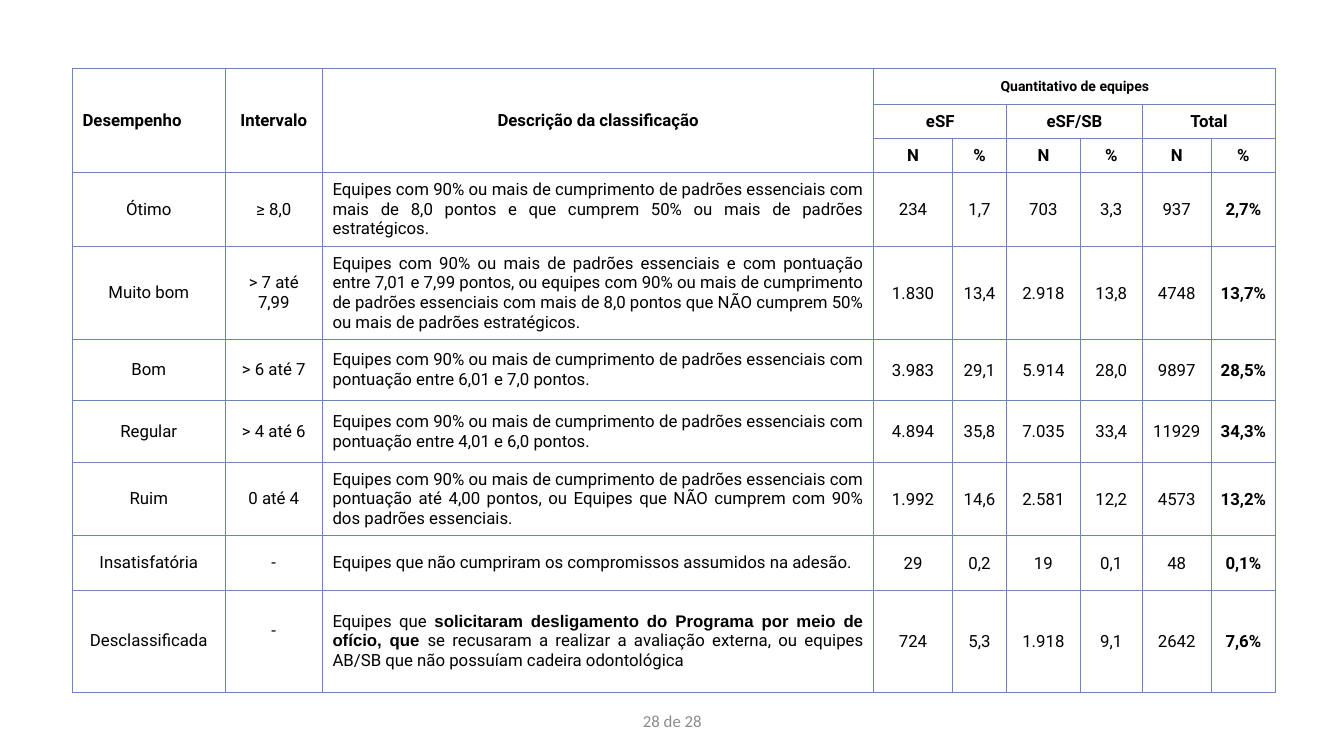
from lxml import etree
from pptx import Presentation
from pptx.dml.color import RGBColor
from pptx.enum.text import MSO_ANCHOR, PP_ALIGN
from pptx.oxml.ns import qn
from pptx.util import Cm, Pt

LEFT, CENTER, JUSTIFY = PP_ALIGN.LEFT, PP_ALIGN.CENTER, PP_ALIGN.JUSTIFY
MIDDLE = MSO_ANCHOR.MIDDLE

BORDER = "6E86B6"
COLUMN_WIDTHS = [3.84, 2.46, 13.89, 1.98, 1.37, 1.85, 1.57, 1.73, 1.63]
ROW_HEIGHTS = [0.91, 0.81, 0.81, 1.85, 2.31, 1.55, 1.55, 1.85, 1.37, 2.57]
LABEL_MARGINS = (0.25, 0.18, 0.25, 0.18)
COUNT_MARGINS = (0.03, 0.03, 0.03, 0)
RAISED_MARGINS = (0.25, 0.18, 0.25, 0.69)

HEADINGS = [
    (0, 0, 3, 1, "Desempenho"),
    (0, 1, 3, 1, "Intervalo"),
    (0, 2, 3, 1, "Descrição da classificação"),
    (0, 3, 1, 6, "Quantitativo de equipes"),
    (1, 3, 1, 2, "eSF"),
    (1, 5, 1, 2, "eSF/SB"),
    (1, 7, 1, 2, "Total"),
] + [(2, column, 1, 1, "N" if column % 2 else "%") for column in range(3, 9)]

RATINGS = [
    ("Ótimo", "≥ 8,0",
     ["Equipes com 90% ou mais de cumprimento de padrões essenciais com mais de 8,0 pontos "
      "e que cumprem 50% ou mais de padrões estratégicos."],
     "234", "1,7", "703", "3,3", "937", "2,7%"),
    ("Muito bom", "> 7 até 7,99",
     ["Equipes com 90% ou mais de padrões essenciais e com pontuação entre 7,01 e 7,99 pontos, "
      "ou equipes com 90% ou mais de cumprimento de padrões essenciais com mais de 8,0 pontos "
      "que NÃO cumprem 50% ou mais de padrões estratégicos."],
     "1.830", "13,4", "2.918", "13,8", "4748", "13,7%"),
    ("Bom", "> 6 até 7",
     ["Equipes com 90% ou mais de cumprimento de padrões essenciais com pontuação entre "
      "6,01 e 7,0 pontos."],
     "3.983", "29,1", "5.914", "28,0", "9897", "28,5%"),
    ("Regular", "> 4 até 6",
     ["Equipes com 90% ou mais de cumprimento de padrões essenciais com pontuação entre "
      "4,01 e 6,0 pontos."],
     "4.894", "35,8", "7.035", "33,4", "11929", "34,3%"),
    ("Ruim", "0 até 4",
     ["Equipes com 90% ou mais de cumprimento de padrões essenciais com pontuação até 4,00 pontos, "
      "ou Equipes que NÃO cumprem com 90% dos padrões essenciais."],
     "1.992", "14,6", "2.581", "12,2", "4573", "13,2%"),
    ("Insatisfatória", "-",
     ["Equipes que não cumpriram os compromissos assumidos na adesão."],
     "29", "0,2", "19", "0,1", "48", "0,1%"),
    ("Desclassificada", "-",
     ["Equipes que ",
      "solicitaram desligamento do Programa por meio de ofício, que ",
      "se recusaram a realizar a avaliação externa, ou equipes AB/SB que não possuíam "
      "cadeira odontológica"],
     "724", "5,3", "1.918", "9,1", "2642", "7,6%"),
]


def rgb(value):
    return RGBColor.from_string(value)


def write(frame, text, size=12, font="Roboto", color="000000", bold=False, align=CENTER):
    paragraph = frame.paragraphs[0]
    paragraph.alignment = align
    run = paragraph.add_run()
    run.text = text
    run.font.size = Pt(size)
    run.font.name = font
    run.font.bold = bold
    run.font.color.rgb = rgb(color)


def outline(cell):
    properties = cell._tc.get_or_add_tcPr()
    for side in ("a:lnL", "a:lnR", "a:lnT", "a:lnB"):
        line = etree.SubElement(properties, qn(side), w=str(Pt(0.75)))
        fill = etree.SubElement(line, qn("a:solidFill"))
        etree.SubElement(fill, qn("a:srgbClr"), val=BORDER)


def set_margins(cell, margins):
    cell.margin_left, cell.margin_top, cell.margin_right, cell.margin_bottom = map(Cm, margins)


def fill_headings(table):
    for row, column, height, width, heading in HEADINGS:
        cell = table.cell(row, column)
        if height * width > 1:
            cell.merge(table.cell(row + height - 1, column + width - 1))
        write(cell.text_frame, heading, bold=True,
              size=10 if width == 6 else 12,
              align=LEFT if column == 0 else CENTER)


def fill_ratings(table):
    for row, (rating, interval, description, *counts) in enumerate(RATINGS, 3):
        write(table.cell(row, 0).text_frame, rating)
        write(table.cell(row, 1).text_frame, interval)
        for part, text in enumerate(description):
            emphasis = part == 1
            write(table.cell(row, 2).text_frame, text, align=JUSTIFY,
                  bold=emphasis, font="Arial" if emphasis else "Roboto")
        for column, count in enumerate(counts, 3):
            cell = table.cell(row, column)
            set_margins(cell, COUNT_MARGINS)
            write(cell.text_frame, count, bold=column == 8)
    set_margins(table.cell(len(ROW_HEIGHTS) - 1, 1), RAISED_MARGINS)


def add_performance_table(slide, left, top):
    table = slide.shapes.add_table(
        len(ROW_HEIGHTS), len(COLUMN_WIDTHS), Cm(left), Cm(top),
        Cm(sum(COLUMN_WIDTHS)), Cm(sum(ROW_HEIGHTS))).table
    table.first_row = table.horz_banding = False
    for column, width in zip(table.columns, COLUMN_WIDTHS):
        column.width = Cm(width)
    for row, height in zip(table.rows, ROW_HEIGHTS):
        row.height = Cm(height)
    for cell in table.iter_cells():
        outline(cell)
        cell.fill.solid()
        cell.fill.fore_color.rgb = rgb("FFFFFF")
        cell.vertical_anchor = MIDDLE
        set_margins(cell, LABEL_MARGINS)
    fill_headings(table)
    fill_ratings(table)


def add_page_count(slide, left, top, width, height):
    frame = slide.shapes.add_textbox(Cm(left), Cm(top), Cm(width), Cm(height)).text_frame
    frame.word_wrap = True
    frame.vertical_anchor = MIDDLE
    write(frame, "28 de 28", font="Calibri", color="8C8C8C")


def main():
    presentation = Presentation()
    presentation.slide_width = Cm(33.87)
    presentation.slide_height = Cm(19.05)
    slide = presentation.slides.add_slide(presentation.slide_layouts[6])
    add_performance_table(slide, 1.83, 1.73)
    add_page_count(slide, 11.23, 17.65, 11.43, 1.02)
    presentation.save("out.pptx")


if __name__ == "__main__":
    main()
